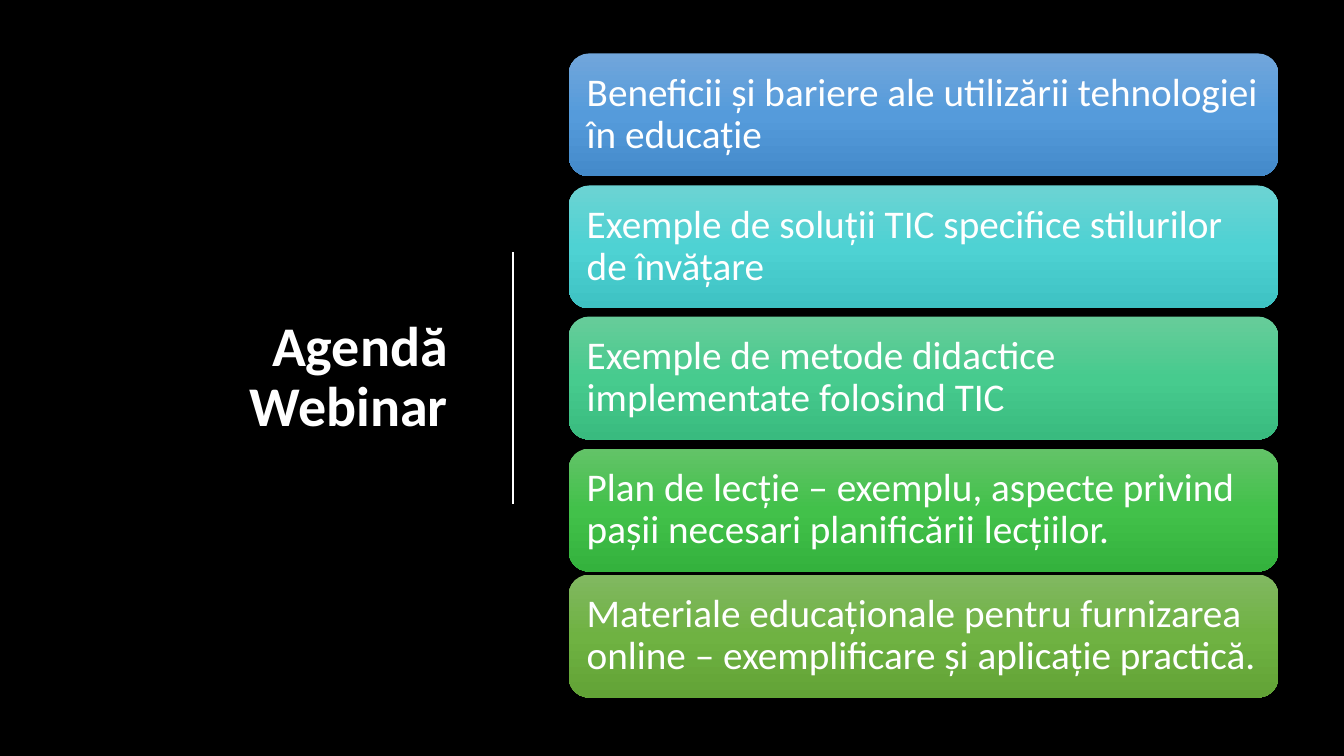
from copy import deepcopy

from lxml import etree
from pptx import Presentation
from pptx.dml.color import RGBColor
from pptx.enum import shapes, text
from pptx.oxml import ns
from pptx.util import Inches, Pt

COLORS = {
    "background": "000000",
    "foreground": "FFFFFF",
    "blue": ("71A6DB", "559BDB", "448ACA"),
    "cyan": ("6CD3D3", "4ED2D3", "3EC2C3"),
    "teal": ("67CC9A", "47CB8E", "39BB7F"),
    "green": ("63C368", "42C14A", "34B23D"),
    "olive": ("81B861", "6FB242", "62A336"),
}
AGENDA = [
    ("blue", 0.53, "Beneficii și bariere ale utilizării tehnologiei în educație"),
    ("cyan", 1.84, "Exemple de soluții TIC specifice stilurilor de învățare"),
    ("teal", 3.14, "Exemple de metode didactice implementate folosind TIC"),
    ("green", 4.45, "Plan de lecție – exemplu, aspecte privind pașii necesari planificării lecțiilor."),
    ("olive", 5.7, "Materiale educaționale pentru furnizarea online – exemplificare și aplicație practică."),
]


def rgb(name):
    """Return the named single colour."""
    return RGBColor.from_string(COLORS[name])


def set_text(shape, wording, alignment, font_format, frame_format):
    """Write one paragraph and apply the formats to it."""
    frame = shape.text_frame
    frame.text = wording
    frame_format = {"word_wrap": True, "vertical_anchor": text.MSO_ANCHOR.MIDDLE, **frame_format}
    for name, value in frame_format.items():
        setattr(frame, name, value)
    paragraph = frame.paragraphs[0]
    paragraph.alignment = alignment
    paragraph.line_spacing = 0.9
    font = paragraph.runs[0].font
    for name, value in {"name": "Calibri", **font_format}.items():
        setattr(font, name, value)
    font.color.rgb = rgb("foreground")


def fill_gradient(shape, colors):
    """Fill a shape from top to bottom with evenly spaced colours."""
    shape.fill.gradient()
    shape.fill.gradient_angle = 270
    stop_list = shape.element.find(".//" + ns.qn("a:gsLst"))
    template = deepcopy(stop_list[0])
    stop_list[:] = [deepcopy(template) for _ in colors]
    for index, (stop, color) in enumerate(zip(shape.fill.gradient_stops, colors)):
        stop.color.rgb = RGBColor.from_string(color)
        stop.position = index / (len(colors) - 1)


def add_title(slide, left, top, width, height):
    """Place the slide title in its box."""
    title = slide.shapes.title
    box = {"left": left, "top": top, "width": width, "height": height}
    for name, value in box.items():
        setattr(title, name, Inches(value))
    frame_format = {"auto_size": text.MSO_AUTO_SIZE.NONE}
    set_text(title, "Agendă Webinar", text.PP_ALIGN.RIGHT, {"size": Pt(40), "bold": True}, frame_format)


def add_divider(slide, left, top, height):
    """Draw the vertical line between title and agenda."""
    divider = slide.shapes.add_connector(
        shapes.MSO_CONNECTOR.STRAIGHT, Inches(left), Inches(top), Inches(left), Inches(top + height))
    divider.line.color.rgb = rgb("foreground")
    divider.line.width = Pt(1.25)
    etree.SubElement(divider.element.spPr, ns.qn("a:effectLst"))


def add_agenda_item(slide, left, top, width, height, color, wording):
    """Draw one rounded agenda box with its wording."""
    item = slide.shapes.add_shape(
        shapes.MSO_SHAPE.ROUNDED_RECTANGLE, Inches(left), Inches(top), Inches(width), Inches(height))
    item.shadow.inherit = False
    item.line.fill.background()
    fill_gradient(item, COLORS[color])
    margins = {"margin_" + side: Inches(0.12) for side in ("left", "top", "right", "bottom")}
    set_text(item, wording, text.PP_ALIGN.LEFT, {"size": Pt(28)}, margins)


def build_agenda_slide(presentation):
    """Add the agenda slide to the presentation."""
    slide = presentation.slides.add_slide(presentation.slide_layouts.get_by_name("Title Only"))
    slide.background.fill.solid()
    slide.background.fill.fore_color.rgb = rgb("background")
    add_title(slide, 0.92, 1.17, 3.62, 5.17)
    add_divider(slide, 5.09, 2.5, 2.5)
    for color, top, wording in AGENDA:
        add_agenda_item(slide, 5.64, top, 7.04, 1.22, color, wording)


def main():
    """Create and save the presentation."""
    presentation = Presentation()
    presentation.slide_width = Inches(13.33)
    presentation.slide_height = Inches(7.5)
    build_agenda_slide(presentation)
    presentation.save("out.pptx")


if __name__ == "__main__":
    main()
